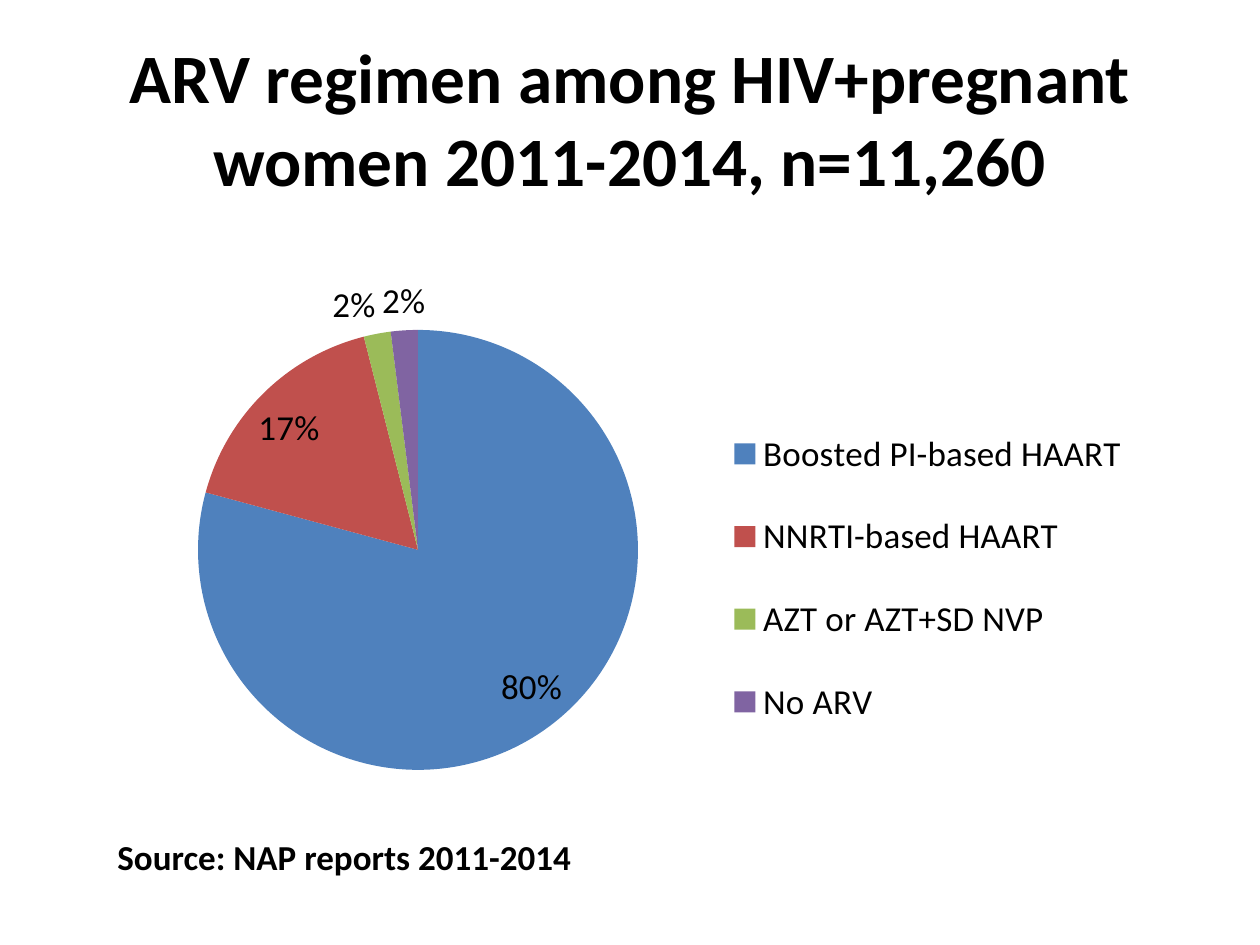
import pptx
import pptx.chart.data
import pptx.dml.color
import pptx.enum.chart
import pptx.enum.text
import pptx.oxml
import pptx.oxml.ns
import pptx.util

PX_PER_INCH = 126
FONT = "Calibri"
COLORS = {
    "text": "000000",
    "boosted": "4F81BD",
    "nnrti": "C0504D",
    "azt": "9BBB59",
    "none": "8064A2",
}
REGIMENS = [
    ("Boosted PI-based HAART", 80, "boosted"),
    ("NNRTI-based HAART", 17, "nnrti"),
    ("AZT or AZT+SD NVP", 2, "azt"),
    ("No ARV", 2, "none"),
]


def px(length):
    return pptx.util.Emu(round(length * 914400 / PX_PER_INCH))


def rgb(name):
    return pptx.dml.color.RGBColor.from_string(COLORS[name])


def style_font(font, size, bold=False):
    font.name = FONT
    font.size = pptx.util.Pt(size)
    font.bold = bold
    font.color.rgb = rgb("text")


def add_text(page, area, text, size, align, anchor, wrap):
    box = page.shapes.add_textbox(*map(px, area))
    frame = box.text_frame
    frame.word_wrap = wrap
    frame.vertical_anchor = anchor
    para = frame.paragraphs[0]
    para.alignment = align
    span = para.add_run()
    span.text = text
    style_font(span.font, size, bold=True)


def make_layout(area, chart_area, inner=False):
    """Manual chart layout for an area given in slide px."""
    left, top, width, height = chart_area
    fractions = {
        "x": (area[0] - left) / width,
        "y": (area[1] - top) / height,
        "w": area[2] / width,
        "h": area[3] / height,
    }
    target = '<c:layoutTarget val="inner"/>' if inner else ""
    modes = '<c:xMode val="edge"/><c:yMode val="edge"/>'
    sizes = "".join(f'<c:{key} val="{value:.4f}"/>' for key, value in fractions.items())
    return pptx.oxml.parse_xml(
        f'<c:layout {pptx.oxml.ns.nsdecls("c")}><c:manualLayout>'
        f"{target}{modes}{sizes}</c:manualLayout></c:layout>"
    )


def place(parent, layout, index):
    for old in parent.findall(pptx.oxml.ns.qn("c:layout")):
        parent.remove(old)
    parent.insert(index, layout)


def add_pie(page, area, pie_area, legend_area):
    data = pptx.chart.data.CategoryChartData()
    data.categories = [name for name, _, _ in REGIMENS]
    data.add_series("Series 1", [share for _, share, _ in REGIMENS])
    chart = page.shapes.add_chart(
        pptx.enum.chart.XL_CHART_TYPE.PIE, *map(px, area), data
    ).chart
    chart.has_title = False
    style_font(chart.font, 10)

    # Slices
    plot = chart.plots[0]
    plot.vary_by_categories = True
    for index, (_, _, color) in enumerate(REGIMENS):
        fill = plot.series[0].points[index].format.fill
        fill.solid()
        fill.fore_color.rgb = rgb(color)

    # Labels: the rounded shares add up to 101, so show them as given
    labels = plot.series[0].data_labels
    labels.show_value = True
    labels.number_format = '0"%"'
    labels.number_format_is_linked = False
    labels.position = pptx.enum.chart.XL_LABEL_POSITION.BEST_FIT
    style_font(labels.font, 20)

    # Legend
    chart.has_legend = True
    legend = chart.legend
    legend.position = pptx.enum.chart.XL_LEGEND_POSITION.RIGHT
    legend.include_in_layout = False
    style_font(legend.font, 20)

    # Manual places of pie and legend
    plot_area = chart.element.find(".//" + pptx.oxml.ns.qn("c:plotArea"))
    legend_part = chart.element.find(".//" + pptx.oxml.ns.qn("c:legend"))
    place(plot_area, make_layout(pie_area, area, inner=True), 0)
    place(legend_part, make_layout(legend_area, area), 1)


def main():
    deck = pptx.Presentation()
    deck.slide_width = px(1260)
    deck.slide_height = px(945)
    page = deck.slides.add_slide(deck.slide_layouts[6])
    align = pptx.enum.text.PP_ALIGN
    anchor = pptx.enum.text.MSO_ANCHOR

    # Title
    add_text(page, (63, 38, 1134, 158),
             "ARV regimen among HIV+pregnant women 2011-2014, n=11,260",
             39.6, align.CENTER, anchor.MIDDLE, True)

    # Chart
    add_pie(page, (94, 262, 1067, 525), (198, 330, 440, 440), (718, 393, 420, 370))

    # Source
    add_text(page, (105, 829, 483, 55), "Source: NAP reports 2011-2014",
             20, align.LEFT, anchor.TOP, False)

    deck.save("out.pptx")


if __name__ == "__main__":
    main()
